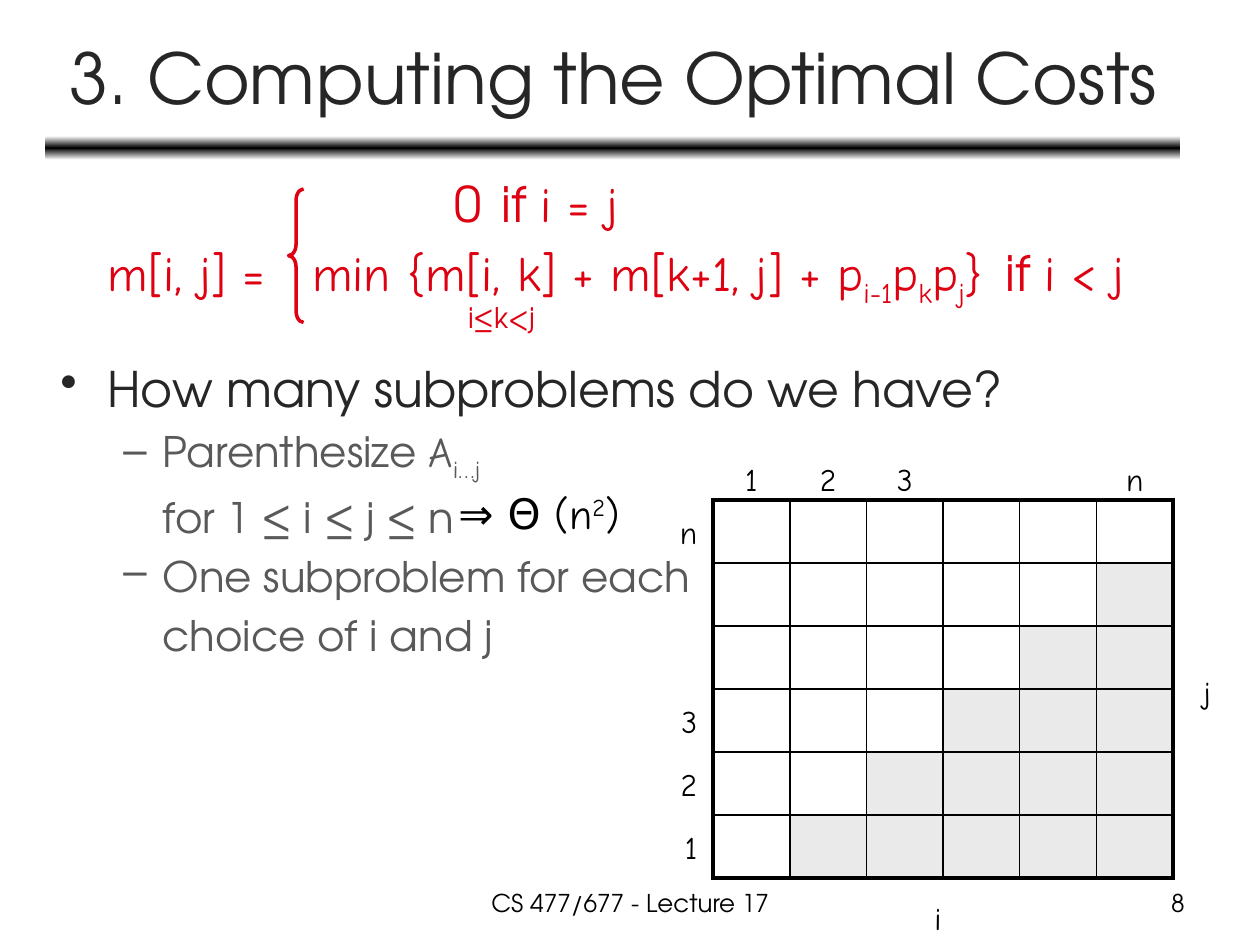
from copy import deepcopy
from dataclasses import dataclass
from lxml.etree import SubElement
from pptx import Presentation
from pptx.dml.color import RGBColor
from pptx.enum.shapes import MSO_SHAPE as Preset
from pptx.enum.text import MSO_ANCHOR as Anchor, PP_ALIGN as Align
from pptx.oxml.ns import qn
from pptx.util import Pt


@dataclass(frozen=True)
class Theme:
    heading: str = "TeX Gyre Adventor"
    math: str = "Comic Neue"
    ink: str = "262626"
    muted: str = "595959"
    accent: str = "DD0111"
    black: str = "000000"
    white: str = "FFFFFF"
    shade: str = "EAEAEA"
    title: int = 40
    body: int = 28
    sub: int = 24
    label: int = 18
    footer: int = 14


THEME = Theme()
LOW, HIGH = -25, 30  # baseline shifts in percent


def add_span(para, text, font=THEME.heading, size=THEME.body, color=THEME.black, shift=0):
    span = para.add_run()
    span.text = text
    span.font.name = font
    span.font.size = Pt(size)
    span.font.color.rgb = RGBColor.from_string(color)
    if shift:
        span._r.get_or_add_rPr().set("baseline", str(shift * 1000))


def add_box(page, box, wrap=True, anchor=Anchor.TOP):
    frame = page.shapes.add_textbox(*map(Pt, box)).text_frame
    frame.word_wrap = wrap
    frame.vertical_anchor = anchor
    return frame


def add_label(page, box, text, align=Align.CENTER, wrap=True, anchor=Anchor.TOP, **style):
    para = add_box(page, box, wrap, anchor).paragraphs[0]
    para.alignment = align
    add_span(para, text, **style)


def add_para(frame, spans, left=0, first=0, stops=(), bullet=None, spacing=None, **style):
    """Add one paragraph; each span is (text, changes to the style)."""
    para = frame.paragraphs[0]
    if para.runs:
        para = frame.add_paragraph()
    para.space_before = Pt(0.2 * style.get("size", THEME.body))
    if spacing:
        para.line_spacing = spacing
    props = para._p.get_or_add_pPr()
    props.set("marL", str(Pt(left)))
    props.set("indent", str(Pt(first)))
    if bullet:
        SubElement(props, qn("a:buChar"), char=bullet)
    if stops:
        tabs = SubElement(props, qn("a:tabLst"))
        for stop in stops:
            SubElement(tabs, qn("a:tab"), pos=str(Pt(stop)), algn="l")
    for text, changes in spans:
        add_span(para, text, **(style | changes))


def add_header(page, box):
    left, top, width, height = box
    add_label(page, box, "3. Computing the Optimal Costs", anchor=Anchor.MIDDLE,
              size=THEME.title, color=THEME.ink)
    # Rule that fades from black to white at both edges
    rule = page.shapes.add_shape(
        Preset.ROUNDED_RECTANGLE, Pt(left - 0.7), Pt(top + height - 1.5), Pt(width + 0.7), Pt(13.7))
    rule.shadow.inherit = False
    rule.line.fill.background()
    rule.fill.gradient()
    rule.fill.gradient_angle = 90
    edge, middle = rule.fill.gradient_stops
    edge.color.rgb = RGBColor.from_string(THEME.white)
    edge.position = 0
    middle.color.rgb = RGBColor.from_string(THEME.black)
    middle.position = 0.5
    stops = rule._element.spPr.find(".//" + qn("a:gsLst"))
    last = deepcopy(stops[0])
    last.set("pos", "100000")
    stops.append(last)


def add_body(page, box):
    left, top = box[:2]
    frame = add_box(page, box)
    math, low = {"font": THEME.math}, {"font": THEME.math, "shift": LOW}
    red = {"color": THEME.accent}

    # Recurrence: two cases and the range of k
    add_para(frame, [("0\tif ", {}), ("i = j", math)], first=225.5, stops=[586], **red)
    add_para(frame, [("m[i, j] =\tmin {m[i, k] + m[k+1, j] + p", math), ("i-1", low),
                     ("p", math), ("k", low), ("p", math), ("j", low), ("}\t", math),
                     ("if ", {}), ("i < j", math)],
             first=27, stops=[137, 541.5], **red)
    add_para(frame, [("i≤k<j", {"shift": HIGH})], first=233, spacing=0.5, **red)

    # Question and its answers
    add_para(frame, [("How many subproblems do we have?", {})],
             left=27, first=-27, bullet="•", color=THEME.ink)
    sub = {"left": 58.5, "size": THEME.sub, "color": THEME.muted}
    item = sub | {"first": -22.5, "bullet": "–"}
    add_para(frame, [("Parenthesize ", {}), ("A", math), ("i…j", low)], **item)
    add_para(frame, [("for 1 ≤ i ≤ j ≤ n", {})], **sub)
    add_para(frame, [("One subproblem for each", {})], **item)
    add_para(frame, [("choice of i and j", {})], **sub)

    # Brace that joins the two cases
    brace = page.shapes.add_shape(
        Preset.LEFT_BRACE, Pt(left + 137.5), Pt(top + 12.2), Pt(8.6), Pt(76.3))
    brace.adjustments[0] = 0.759
    brace.shadow.inherit = False
    brace.fill.background()
    brace.line.color.rgb = RGBColor.from_string(THEME.accent)
    brace.line.width = Pt(2)

    # Count of subproblems
    count = add_box(page, (left + 227.5, top + 179.3, 113, 36), wrap=False)
    add_para(count, [("⇒ Θ (n", {}), ("2", {"shift": HIGH}), (")", {})],
             font=THEME.math, size=THEME.sub)
    count.paragraphs[0].space_before = Pt(0)


def set_border(cell, side, width):
    line = SubElement(cell._tc.get_or_add_tcPr(), qn("a:" + side), w=str(Pt(width)))
    fill = SubElement(line, qn("a:solidFill"))
    SubElement(fill, qn("a:srgbClr"), val=THEME.black)


def add_grid(page, box, count=6):
    left, top, width, height = box
    step_x, step_y = width / count, height / count
    table = page.shapes.add_table(count, count, *map(Pt, box)).table
    table.first_row = table.horz_banding = False
    for index in range(count):
        table.columns[index].width = Pt(step_x)
        table.rows[index].height = Pt(step_y)

    # Heavy outline, thin inner lines, shading below the diagonal
    for row in range(count):
        for column in range(count):
            cell = table.cell(row, column)
            outer = {"lnL": column == 0, "lnR": column == count - 1,
                     "lnT": row == 0, "lnB": row == count - 1}
            for side, heavy in outer.items():
                set_border(cell, side, 2.25 if heavy else 1)
            if row + column >= count:
                cell.fill.solid()
                cell.fill.fore_color.rgb = RGBColor.from_string(THEME.shade)
            else:
                cell.fill.background()

    # Index labels: columns from the left, rows from the bottom
    tall, wide = 28.8, 24
    style = {"wrap": False, "font": THEME.math, "size": THEME.label}
    for index, text in ((0, "1"), (1, "2"), (2, "3"), (count - 1, "n")):
        middle_x = left + (index + 0.5) * step_x
        middle_y = top + height - (index + 0.5) * step_y
        add_label(page, (middle_x - wide / 2, top - 26.6, wide, tall), text, **style)
        add_label(page, (left - 2 - wide, middle_y - tall / 2, wide, tall), text,
                  align=Align.RIGHT, **style)

    # Axis names
    add_label(page, (left + width + 7.5, top + height / 2 - 13, wide, tall), "j", **style)
    add_label(page, (left + width / 2 - 15, top + height + 8.6, wide, tall), "i", **style)


def add_footer(page, box):
    left, top, width, height = box
    add_label(page, (left, top, 228, height), "CS 477/677 - Lecture 17", size=THEME.footer)
    add_label(page, (left + width - 168, top, 168, height), "8",
              align=Align.RIGHT, size=THEME.footer)


def main():
    deck = Presentation()
    deck.slide_width, deck.slide_height = Pt(720), Pt(540)
    page = deck.slides.add_slide(deck.slide_layouts[6])
    add_header(page, (26.6, 7.9, 648, 71.3))
    add_body(page, (27.4, 95.8, 674.6, 399.6))
    add_grid(page, (407.5, 285.8, 262.8, 216))
    add_footer(page, (246.2, 504, 437.8, 25.2))
    deck.save("out.pptx")


if __name__ == "__main__":
    main()
